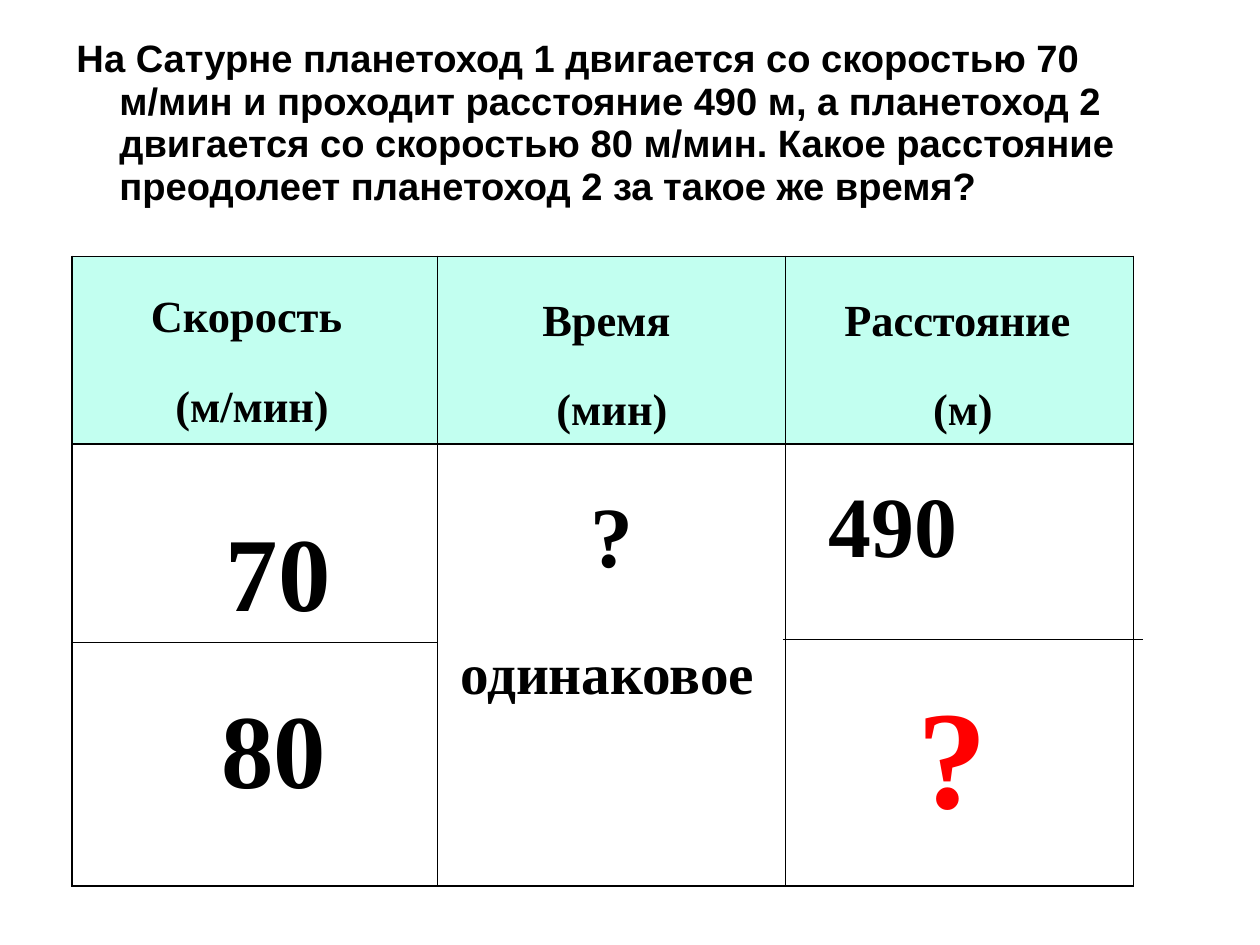
"""Build a slide with a speed, time and distance task."""
import pptx
import pptx.dml.color
import pptx.enum.shapes
import pptx.enum.text
import pptx.oxml
import pptx.oxml.ns
import pptx.util

Pt = pptx.util.Pt
ALIGN = pptx.enum.text.PP_ALIGN
BLACK = pptx.dml.color.RGBColor(0x00, 0x00, 0x00)
WHITE = pptx.dml.color.RGBColor(0xFF, 0xFF, 0xFF)
MINT = pptx.dml.color.RGBColor(0xC2, 0xFF, 0xF0)
RED = pptx.dml.color.RGBColor(0xFF, 0x00, 0x00)
SERIF = "Times New Roman"
TASK = ("На Сатурне планетоход 1 двигается со скоростью 70 м/мин и проходит "
        "расстояние 490 м, а планетоход 2 двигается со скоростью 80 м/мин. "
        "Какое расстояние преодолеет планетоход 2 за такое же время?")
HEADS = [
    (39.6, 161.3, 238.3, ["Скорость ", "(м/мин)"]),
    (277.5, 163.4, 216, ["Время ", "(мин)"]),
    (493.2, 163.4, 226.8, ["Расстояние ", "(м)"]),
]


def add_run(para, text, size, color=BLACK, face=SERIF):
    """Add one bold run to a paragraph."""
    run = para.add_run()
    run.text = text
    font = run.font
    font.name, font.size, font.bold = face, Pt(size), True
    font.color.rgb = color


def set_para(para, align, lead, after):
    """Set the alignment and spacing of a paragraph."""
    para.alignment = align
    para.line_spacing = lead
    para.space_after = Pt(after)


def add_label(slide, box, lines, size, align=ALIGN.CENTER, lead=1.5,
              after=6, wrap=True, color=BLACK):
    """Add a text box with one paragraph for each line."""
    frame = slide.shapes.add_textbox(*map(Pt, box)).text_frame
    frame.word_wrap = wrap
    frame.auto_size = pptx.enum.text.MSO_AUTO_SIZE.SHAPE_TO_FIT_TEXT
    for i, line in enumerate(lines):
        para = frame.add_paragraph() if i else frame.paragraphs[0]
        set_para(para, align, lead, after)
        add_run(para, line, size, color)


def add_task(slide):
    """Fill the body placeholder with the task."""
    body = slide.placeholders[1]
    body.left, body.top, body.width, body.height = map(Pt, (48.2, 22.3, 708.5, 140.4))
    frame = body.text_frame
    frame.auto_size = pptx.enum.text.MSO_AUTO_SIZE.NONE
    frame.vertical_anchor = pptx.enum.text.MSO_ANCHOR.TOP
    frame.margin_left = frame.margin_right = frame.margin_bottom = Pt(0)
    frame.margin_top = Pt(2)
    para = frame.paragraphs[0]
    set_para(para, ALIGN.LEFT, 0.93, 14.2)
    para.space_before = Pt(0)
    props = para._p.get_or_add_pPr()
    props.set("marL", str(Pt(27)))
    props.set("indent", str(-Pt(27)))
    props.append(pptx.oxml.parse_xml(
        f"<a:buNone {pptx.oxml.ns.nsdecls('a')}/>"))
    add_run(para, TASK, 24, face="Arial")


def style_cell(cell, color):
    """Give a cell its borders and fill."""
    props = cell._tc.get_or_add_tcPr()
    for side in "LRTB":
        if side == "T" and cell.is_spanned:
            continue
        props.append(pptx.oxml.parse_xml(
            f'<a:ln{side} {pptx.oxml.ns.nsdecls("a")} w="{Pt(1)}"><a:solidFill>'
            f'<a:srgbClr val="{BLACK}"/></a:solidFill></a:ln{side}>'))
    cell.fill.solid()
    cell.fill.fore_color.rgb = color


def add_grid(slide):
    """Add the table with two merged columns."""
    grid = slide.shapes.add_table(
        3, 3, *map(Pt, (45.4, 161.5, 668.6, 396.7))).table
    grid.first_row = grid.horz_banding = False
    for col, width in zip(grid.columns, (230.4, 219.1, 219.1)):
        col.width = Pt(width)
    for row, height in zip(grid.rows, (118.1, 125.2, 153.4)):
        row.height = Pt(height)
    for c in (1, 2):
        grid.cell(1, c).merge(grid.cell(2, c))
    for r, row in enumerate(grid.rows):
        for cell in row.cells:
            style_cell(cell, WHITE if r else MINT)
    same = grid.cell(1, 1)
    same.margin_left = same.margin_right = Pt(5)
    same.margin_top = same.margin_bottom = Pt(0)
    para = same.text_frame.paragraphs[0]
    set_para(para, ALIGN.CENTER, 1.5, 6)
    add_run(para, "?", 54)


def add_rule(slide, left, right, y):
    """Add a thin level line."""
    rule = slide.shapes.add_connector(
        pptx.enum.shapes.MSO_CONNECTOR.STRAIGHT,
        Pt(left), Pt(y), Pt(right), Pt(y))
    rule.line.color.rgb = BLACK
    rule.line.width = Pt(0.75)
    rule._element.spPr.append(pptx.oxml.parse_xml(
        f"<a:effectLst {pptx.oxml.ns.nsdecls('a')}/>"))


def main():
    """Build and save the slide."""
    deck = pptx.Presentation()
    deck.slide_width, deck.slide_height = Pt(793.75), Pt(595.25)
    slide = deck.slides.add_slide(deck.slide_layouts[1])
    title = slide.shapes.title._element
    title.getparent().remove(title)
    add_task(slide)
    add_grid(slide)
    add_rule(slide, 493.2, 720, 402.9)
    for left, top, width, lines in HEADS:
        add_label(slide, (left, top, width, 115), lines, 28)
    add_label(slide, (132.5, 387.4, 81.4, 113), ["80"], 66, ALIGN.LEFT, wrap=False)
    add_label(slide, (278.6, 376.3, 208, 72.7), ["одинаковое"], 36)
    add_label(slide, (134.6, 276.2, 81.4, 113), ["70"], 66, wrap=False)
    add_label(slide, (514.8, 299.2, 110.2, 68.4), ["490"], 54, ALIGN.LEFT,
              0.93, 0, False)
    add_label(slide, (571, 427, 59, 106.6), ["?"], 88, ALIGN.LEFT,
              0.93, 0, False, RED)
    deck.save("out.pptx")


if __name__ == "__main__":
    main()
